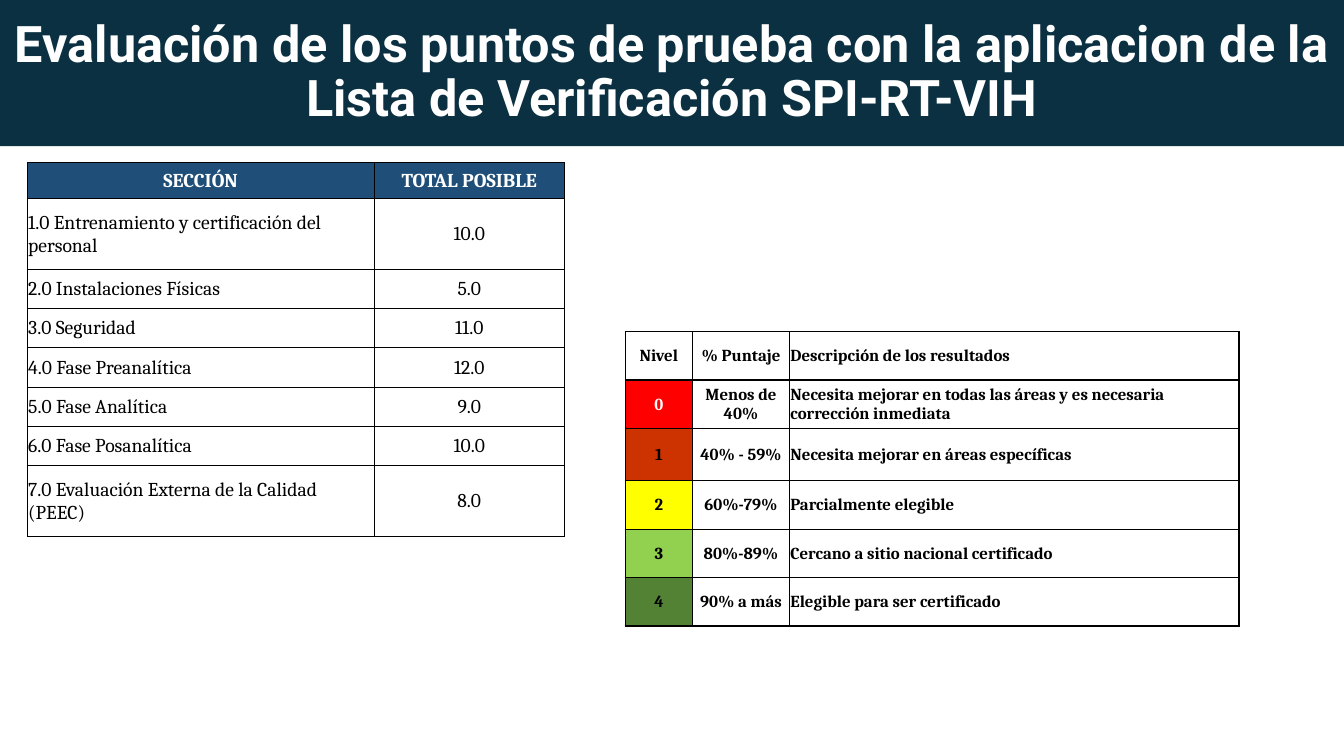
from pptx import Presentation
from pptx.dml.color import RGBColor
from pptx.enum.shapes import MSO_SHAPE
from pptx.enum.text import MSO_ANCHOR, PP_ALIGN
from pptx.oxml import parse_xml
from pptx.oxml.ns import nsdecls
from pptx.util import Inches, Pt

NAVY = RGBColor(0x0B, 0x30, 0x41)
BLUE = RGBColor(0x1F, 0x4E, 0x78)
WHITE = RGBColor(0xFF, 0xFF, 0xFF)
BLACK = RGBColor(0x00, 0x00, 0x00)
RED = RGBColor(0xFF, 0x00, 0x00)
RUST = RGBColor(0xCC, 0x33, 0x00)
YELLOW = RGBColor(0xFF, 0xFF, 0x00)
LIME = RGBColor(0x92, 0xD0, 0x50)
GREEN = RGBColor(0x54, 0x82, 0x35)

SECTIONS = [
    ("SECCIÓN", "TOTAL POSIBLE"),
    ("1.0 Entrenamiento y certificación del personal", "10.0"),
    ("2.0 Instalaciones Físicas", "5.0"),
    ("3.0 Seguridad", "11.0"),
    ("4.0 Fase Preanalítica", "12.0"),
    ("5.0 Fase Analítica", "9.0"),
    ("6.0 Fase Posanalítica", "10.0"),
    ("7.0 Evaluación Externa de la Calidad (PEEC)", "8.0"),
]
LEVELS = [
    ("Nivel", "% Puntaje", "Descripción de los resultados"),
    ("0", "Menos de 40%", "Necesita mejorar en todas las áreas y es necesaria corrección inmediata"),
    ("1", "40% - 59%", "Necesita mejorar en áreas específicas"),
    ("2", "60%-79%", "Parcialmente elegible"),
    ("3", "80%-89%", "Cercano a sitio nacional certificado"),
    ("4", "90% a más", "Elegible para ser certificado"),
]
LEVEL_FILLS = [WHITE, RED, RUST, YELLOW, LIME, GREEN]


def set_font(p, name, size, color, bold):
    p.font.name, p.font.size, p.font.bold = name, Pt(size), bold
    p.font.color.rgb = color


def add_title(s, text, left, top, width, height):
    sp = s.shapes.add_shape(MSO_SHAPE.RECTANGLE, Inches(left), Inches(top),
                            Inches(width), Inches(height))
    sp.shadow.inherit = False
    sp.fill.solid()
    sp.fill.fore_color.rgb = NAVY
    sp.line.fill.background()
    tf = sp.text_frame
    tf.word_wrap = True
    tf.vertical_anchor = MSO_ANCHOR.MIDDLE
    p = tf.paragraphs[0]
    p.text = text
    p.alignment = PP_ALIGN.CENTER
    p.line_spacing = 0.9
    set_font(p, "Roboto", 36, WHITE, True)


def style_cell(cell, text, size, fill, color, bold, align, border):
    # Borders come before the fill in the cell properties
    for side in ("lnL", "lnR", "lnT", "lnB"):
        cell._tc.get_or_add_tcPr().append(parse_xml(
            f'<a:{side} {nsdecls("a")} w="{Pt(border)}"><a:solidFill>'
            f'<a:srgbClr val="{BLACK}"/></a:solidFill></a:{side}>'))
    cell.fill.solid()
    cell.fill.fore_color.rgb = fill
    cell.vertical_anchor = MSO_ANCHOR.MIDDLE
    cell.margin_left = cell.margin_right = cell.margin_top = Inches(0.01)
    cell.margin_bottom = 0
    p = cell.text_frame.paragraphs[0]
    p.text = text
    p.alignment = align
    set_font(p, "Cambria", size, color, bold)


def add_grid(s, left, top, cols, rows):
    table = s.shapes.add_table(len(rows), len(cols), Inches(left), Inches(top),
                               Inches(sum(cols)), Inches(sum(rows))).table
    for col, width in zip(table.columns, cols):
        col.width = Inches(width)
    for row, height in zip(table.rows, rows):
        row.height = Inches(height)
    return table


def add_sections(s, left, top):
    table = add_grid(s, left, top, [3.44, 1.89], [0.36, 0.7] + [0.39] * 5 + [0.7])
    for i, row in enumerate(SECTIONS):
        head = i == 0
        for j, text in enumerate(row):
            align = PP_ALIGN.CENTER if head or j == 1 else PP_ALIGN.LEFT
            style_cell(table.cell(i, j), text, 14, BLUE if head else WHITE,
                       WHITE if head else BLACK, head, align, 0.5)


def add_levels(s, left, top):
    table = add_grid(s, left, top, [0.67, 0.96, 4.46], [0.48, 0.48, 0.52] + [0.48] * 3)
    for i, (row, level_fill) in enumerate(zip(LEVELS, LEVEL_FILLS)):
        for j, text in enumerate(row):
            fill = level_fill if j == 0 else WHITE
            style_cell(table.cell(i, j), text, 12, fill,
                       WHITE if fill == RED else BLACK, True,
                       PP_ALIGN.LEFT if j == 2 else PP_ALIGN.CENTER, 1)


def main():
    prs = Presentation()
    prs.slide_width, prs.slide_height = Inches(13.33), Inches(7.5)
    s = prs.slides.add_slide(prs.slide_layouts[6])
    add_title(s, "Evaluación de los puntos de prueba con la aplicacion de la "
                 "Lista de Verificación SPI-RT-VIH", 0, 0, 13.33, 1.45)
    add_levels(s, 6.2, 3.29)
    add_sections(s, 0.27, 1.61)
    prs.save("out.pptx")


if __name__ == "__main__":
    main()
